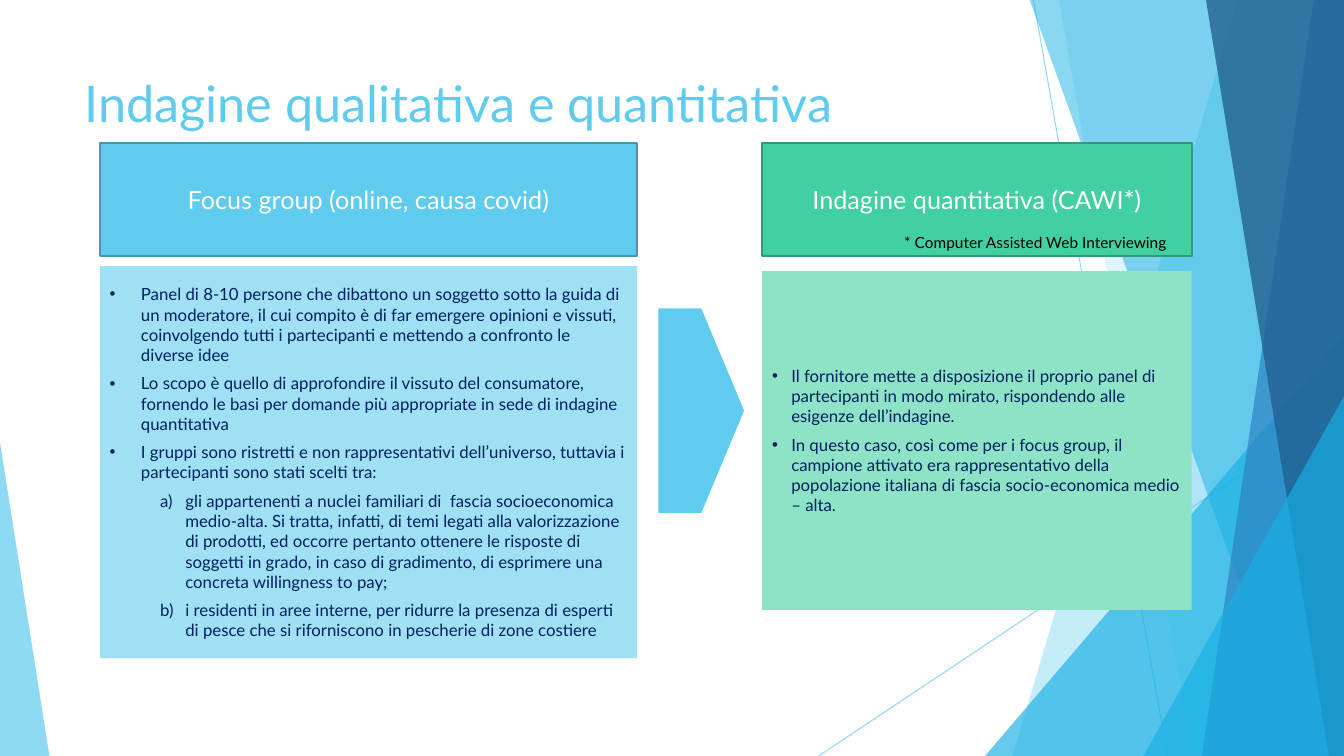
"""Build the slide on qualitative and quantitative research."""
from dataclasses import dataclass
from typing import Optional

from lxml import etree
from pptx import Presentation
from pptx.dml.color import RGBColor
from pptx.enum.shapes import MSO_CONNECTOR, MSO_SHAPE
from pptx.enum.text import MSO_ANCHOR, PP_ALIGN
from pptx.oxml.ns import qn
from pptx.util import Inches, Pt

RECTANGLE = MSO_SHAPE.RECTANGLE
TRIANGLE = MSO_SHAPE.ISOSCELES_TRIANGLE
PENTAGON = MSO_SHAPE.PENTAGON
STRAIGHT = MSO_CONNECTOR.STRAIGHT
TOP, MIDDLE = MSO_ANCHOR.TOP, MSO_ANCHOR.MIDDLE
LEFT, CENTER = PP_ALIGN.LEFT, PP_ALIGN.CENTER

WIDTH, HEIGHT = 13.33, 7.5
BAND_TOP = -0.01
SKY, CYAN, NAVY, WHITE, BLACK = "5FCBEF", "17B0E4", "002060", "FFFFFF", "000000"
BULLET, LETTER = "•", "a)"
HEADER_TOP, HEADER_HEIGHT = 1.42, 1.12


@dataclass(frozen=True)
class Ray:
    start: tuple[float, float]
    end: tuple[float, float]


@dataclass(frozen=True)
class Band:
    top_x: float
    bottom_x: float
    color: str
    opacity: int


@dataclass(frozen=True)
class Corner:
    left: float
    top: float
    width: float
    apex: float
    color: str
    opacity: int


@dataclass(frozen=True)
class Item:
    text: str
    marker: str = ""
    margin: float = 0
    hanging: float = 0


@dataclass(frozen=True)
class Panel:
    left: float
    top: float
    width: float
    height: float
    color: str
    items: tuple[Item, ...] = ()
    border: Optional[str] = None
    size: int = 12
    text_color: str = NAVY
    alignment: PP_ALIGN = LEFT
    preset: MSO_SHAPE = RECTANGLE


@dataclass(frozen=True)
class Label:
    left: float
    top: float
    width: float
    height: float
    text: str
    size: int
    color: str
    wrap: bool


RAYS = (Ray((10.25, 0), (11.58, HEIGHT)), Ray((WIDTH, 4.03), (8.12, HEIGHT)))
BACK_BANDS = (Band(12.28, 10.04, SKY, 36), Band(10.5, 11.83, SKY, 20))
FRONT_BANDS = (
    Band(10.21, 12.91, CYAN, 50),
    Band(13.03, 11.92, "2E83C3", 70),
    Band(11.96, 13.18, "226292", 80),
)
BACK_CORNER = Corner(9.77, 3.33, 3.56, 1, CYAN, 66)
FRONT_CORNERS = (
    Corner(11.34, 3.93, 1.99, 1, CYAN, 66),
    Corner(0, 4.39, 0.49, 0, SKY, 70),
)

FOCUS_ITEMS = (
    *(Item(text, BULLET, 0.31, 0.31) for text in (
        "Panel di 8-10 persone che dibattono un soggetto sotto la guida di un moderatore, il cui compito è di far emergere opinioni e vissuti, coinvolgendo tutti i partecipanti e mettendo a confronto le diverse idee",
        "Lo scopo è quello di approfondire il vissuto del consumatore, fornendo le basi per domande più appropriate in sede di indagine quantitativa",
        "I gruppi sono ristretti e non rappresentativi dell’universo, tuttavia i partecipanti sono stati scelti tra:",
    )),
    *(Item(text, LETTER, 0.75, 0.25) for text in (
        "gli appartenenti a nuclei familiari di  fascia socioeconomica medio-alta. Si tratta, infatti, di temi legati alla valorizzazione di prodotti, ed occorre pertanto ottenere le risposte di soggetti in grado, in caso di gradimento, di esprimere una concreta willingness to pay;",
        "i residenti in aree interne, per ridurre la presenza di esperti di pesce che si riforniscono in pescherie di zone costiere",
    )),
)
SURVEY_ITEMS = tuple(Item(text, BULLET, 0.19, 0.19) for text in (
    "Il fornitore mette a disposizione il proprio panel di partecipanti in modo mirato, rispondendo alle esigenze dell’indagine.",
    "In questo caso, così come per i focus group, il campione attivato era rappresentativo della popolazione italiana di fascia socio-economica medio – alta.",
))
PANELS = (
    Panel(0.99, HEADER_TOP, 5.33, HEADER_HEIGHT, SKY, (Item("Focus group (online, causa covid)"),),
          "4696B1", 18, WHITE, CENTER),
    Panel(0.99, 2.64, 5.33, 3.89, "9FE0F5", FOCUS_ITEMS),
    Panel(7.56, HEADER_TOP, 4.26, HEADER_HEIGHT, "42D0A2", (Item("Indagine quantitativa (CAWI*)"),),
          "319A78", 18, WHITE, CENTER),
    Panel(7.56, 2.69, 4.26, 3.36, "8EE3C7", SURVEY_ITEMS),
    Panel(6.53, 3.06, 0.85, 2.03, SKY, preset=PENTAGON),
)
TITLE = Label(0.74, 0.67, 9.4, 1.44, "Indagine qualitativa e quantitativa", 36, SKY, True)
FOOTNOTE = Label(8.87, 2.26, 2.84, 0.29, "* Computer Assisted Web Interviewing", 11, BLACK, False)


def rgb(color: str) -> RGBColor:
    return RGBColor.from_string(color)


def apply_formats(target, formats: dict) -> None:
    for name, value in formats.items():
        setattr(target, name, value)


def set_opacity(shape, percent: int) -> None:
    for color in shape.element.spPr.iter(qn("a:srgbClr")):
        etree.SubElement(color, qn("a:alpha"), val=str(percent * 1000))


def paint(shape, color: str, border: Optional[str] = None) -> None:
    shape.shadow.inherit = False
    shape.fill.solid()
    shape.fill.fore_color.rgb = rgb(color)
    if border:
        shape.line.color.rgb = rgb(border)
        shape.line.width = Pt(1.5)
    else:
        shape.line.fill.background()


def add_ray(slide, ray: Ray) -> None:
    line = slide.shapes.add_connector(STRAIGHT, *map(Inches, ray.start + ray.end))
    line.line.color.rgb = rgb(SKY)
    line.line.width = Pt(0.75)
    set_opacity(line, 70)
    etree.SubElement(line.element.spPr, qn("a:effectLst"))


def add_band(slide, band: Band) -> None:
    corners = ((WIDTH, BAND_TOP), (WIDTH, HEIGHT), (band.bottom_x, HEIGHT))
    builder = slide.shapes.build_freeform(Inches(band.top_x), Inches(BAND_TOP))
    builder.add_line_segments([(Inches(x), Inches(y)) for x, y in corners], close=True)
    shape = builder.convert_to_shape()
    paint(shape, band.color)
    set_opacity(shape, band.opacity)


def add_corner(slide, corner: Corner) -> None:
    box = (corner.left, corner.top, corner.width, HEIGHT - corner.top)
    shape = slide.shapes.add_shape(TRIANGLE, *map(Inches, box))
    shape.adjustments[0] = corner.apex
    paint(shape, corner.color)
    set_opacity(shape, corner.opacity)


def write_item(paragraph, item: Item, size: int, color: str, alignment: PP_ALIGN) -> None:
    run = paragraph.add_run()
    run.text = item.text
    apply_formats(run.font, {"name": "Lato", "size": Pt(size)})
    run.font.color.rgb = rgb(color)
    apply_formats(paragraph, {"alignment": alignment, "space_after": Pt(6 if item.marker else 0),
                              "level": int(item.marker == LETTER)})
    if item.marker:
        properties = paragraph._p.get_or_add_pPr()
        properties.set("marL", str(Inches(item.margin)))
        properties.set("indent", str(-Inches(item.hanging)))
        if item.marker == LETTER:
            etree.SubElement(properties, qn("a:buAutoNum"), type="alphaLcParenR")
        else:
            etree.SubElement(properties, qn("a:buFont"), typeface="Arial")
            etree.SubElement(properties, qn("a:buChar"), char=item.marker)


def add_panel(slide, panel: Panel) -> None:
    box = (panel.left, panel.top, panel.width, panel.height)
    shape = slide.shapes.add_shape(panel.preset, *map(Inches, box))
    paint(shape, panel.color, panel.border)
    frame = shape.text_frame
    apply_formats(frame, {"word_wrap": True, "vertical_anchor": MIDDLE})
    for index, item in enumerate(panel.items):
        paragraph = frame.add_paragraph() if index else frame.paragraphs[0]
        write_item(paragraph, item, panel.size, panel.text_color, panel.alignment)


def add_label(slide, label: Label) -> None:
    box = (label.left, label.top, label.width, label.height)
    frame = slide.shapes.add_textbox(*map(Inches, box)).text_frame
    apply_formats(frame, {"word_wrap": label.wrap, "vertical_anchor": TOP})
    write_item(frame.paragraphs[0], Item(label.text), label.size, label.color, LEFT)


def main() -> None:
    presentation = Presentation()
    apply_formats(presentation, {"slide_width": Inches(WIDTH), "slide_height": Inches(HEIGHT)})
    slide = presentation.slides.add_slide(presentation.slide_layouts[6])
    for ray in RAYS:
        add_ray(slide, ray)
    for band in BACK_BANDS:
        add_band(slide, band)
    add_corner(slide, BACK_CORNER)
    for band in FRONT_BANDS:
        add_band(slide, band)
    for corner in FRONT_CORNERS:
        add_corner(slide, corner)
    add_label(slide, TITLE)
    for panel in PANELS:
        add_panel(slide, panel)
    add_label(slide, FOOTNOTE)
    presentation.save("out.pptx")


if __name__ == "__main__":
    main()
